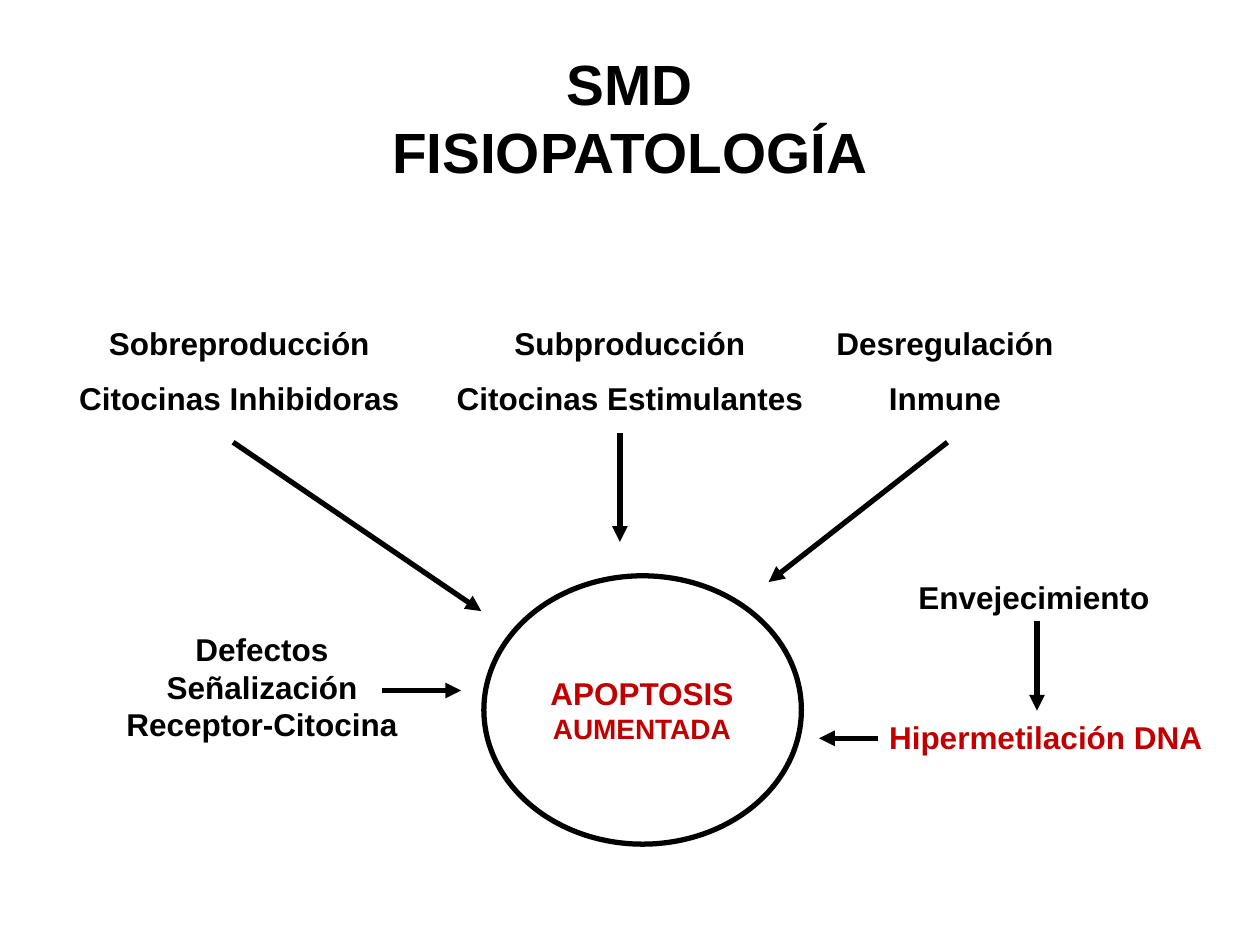
from typing import NamedTuple

from lxml.etree import SubElement
from pptx import Presentation
from pptx.dml.color import RGBColor
from pptx.enum.shapes import MSO_CONNECTOR, MSO_SHAPE
from pptx.enum.text import MSO_ANCHOR, PP_ALIGN
from pptx.oxml.ns import qn
from pptx.slide import Slide
from pptx.util import Inches, Pt

BLACK = RGBColor(0x00, 0x00, 0x00)
RED = RGBColor(0xC0, 0x00, 0x00)
FONT = "Arial"
STROKE = Pt(3)


class Label(NamedTuple):
    lines: tuple[str, ...]
    left: float
    top: float
    width: float
    height: float
    sizes: tuple[float, ...] = (18,)
    color: RGBColor = BLACK
    gap: float = 0
    align: PP_ALIGN = PP_ALIGN.CENTER
    anchor: MSO_ANCHOR = MSO_ANCHOR.TOP


class Arrow(NamedTuple):
    x1: float
    y1: float
    x2: float
    y2: float


LABELS = [
    Label(("SMD\vFISIOPATOLOGÍA",), 0.5, 0.3, 9, 1.25, (32.4,),
          anchor=MSO_ANCHOR.MIDDLE),
    Label(("Sobreproducción", "Citocinas Inhibidoras"),
          0.4, 2.52, 3, 0.85, (18, 18), gap=10),
    Label(("Subproducción", "Citocinas Estimulantes"),
          3.5, 2.52, 3, 0.85, (18, 18), gap=10),
    Label(("Desregulación", "Inmune"), 6, 2.52, 3, 0.85, (18, 18), gap=10),
    Label(("APOPTOSIS", "AUMENTADA"), 4.23, 5.3, 1.73, 0.7, (18, 16), RED),
    Label(("Defectos Señalización Receptor-Citocina",), 0.83, 4.95, 2.5, 1),
    Label(("Hipermetilación DNA",), 6.88, 5.65, 2.84, 0.4, color=RED),
    Label(("Envejecimiento",), 7.19, 4.54, 2.52, 0.4, align=PP_ALIGN.LEFT),
]

ARROWS = [
    Arrow(1.85, 3.51, 3.82, 4.85),
    Arrow(4.92, 3.44, 4.92, 4.3),
    Arrow(7.52, 3.51, 6.1, 4.62),
    Arrow(3.03, 5.48, 3.66, 5.48),
    Arrow(6.97, 5.86, 6.5, 5.86),
    Arrow(8.23, 4.93, 8.23, 5.64),
]


def add_label(slide: Slide, label: Label) -> None:
    box = slide.shapes.add_textbox(Inches(label.left), Inches(label.top),
                                   Inches(label.width), Inches(label.height))
    frame = box.text_frame
    frame.word_wrap = True
    frame.vertical_anchor = label.anchor
    frame.text = "\n".join(label.lines)
    for i, (para, size) in enumerate(zip(frame.paragraphs, label.sizes)):
        para.alignment = label.align
        if i and label.gap:
            para.space_before = Pt(label.gap)
        for run in para.runs:
            run.font.name = FONT
            run.font.size = Pt(size)
            run.font.bold = True
            run.font.color.rgb = label.color


def add_arrow(slide: Slide, arrow: Arrow) -> None:
    line = slide.shapes.add_connector(
        MSO_CONNECTOR.STRAIGHT, Inches(arrow.x1), Inches(arrow.y1),
        Inches(arrow.x2), Inches(arrow.y2))
    line.line.color.rgb = BLACK
    line.line.width = STROKE
    SubElement(line.line._get_or_add_ln(), qn("a:tailEnd"), type="triangle")
    SubElement(line._element.spPr, qn("a:effectLst"))


def add_circle(slide: Slide) -> None:
    circle = slide.shapes.add_shape(MSO_SHAPE.OVAL, Inches(3.84), Inches(4.57),
                                    Inches(2.52), Inches(2.13))
    circle.shadow.inherit = False
    circle.fill.background()
    circle.line.color.rgb = BLACK
    circle.line.width = STROKE


def main() -> None:
    deck = Presentation()
    deck.slide_width = Inches(10)
    deck.slide_height = Inches(7.5)
    slide = deck.slides.add_slide(deck.slide_layouts[6])
    add_circle(slide)
    for label in LABELS:
        add_label(slide, label)
    for arrow in ARROWS:
        add_arrow(slide, arrow)
    deck.save("out.pptx")


if __name__ == "__main__":
    main()
